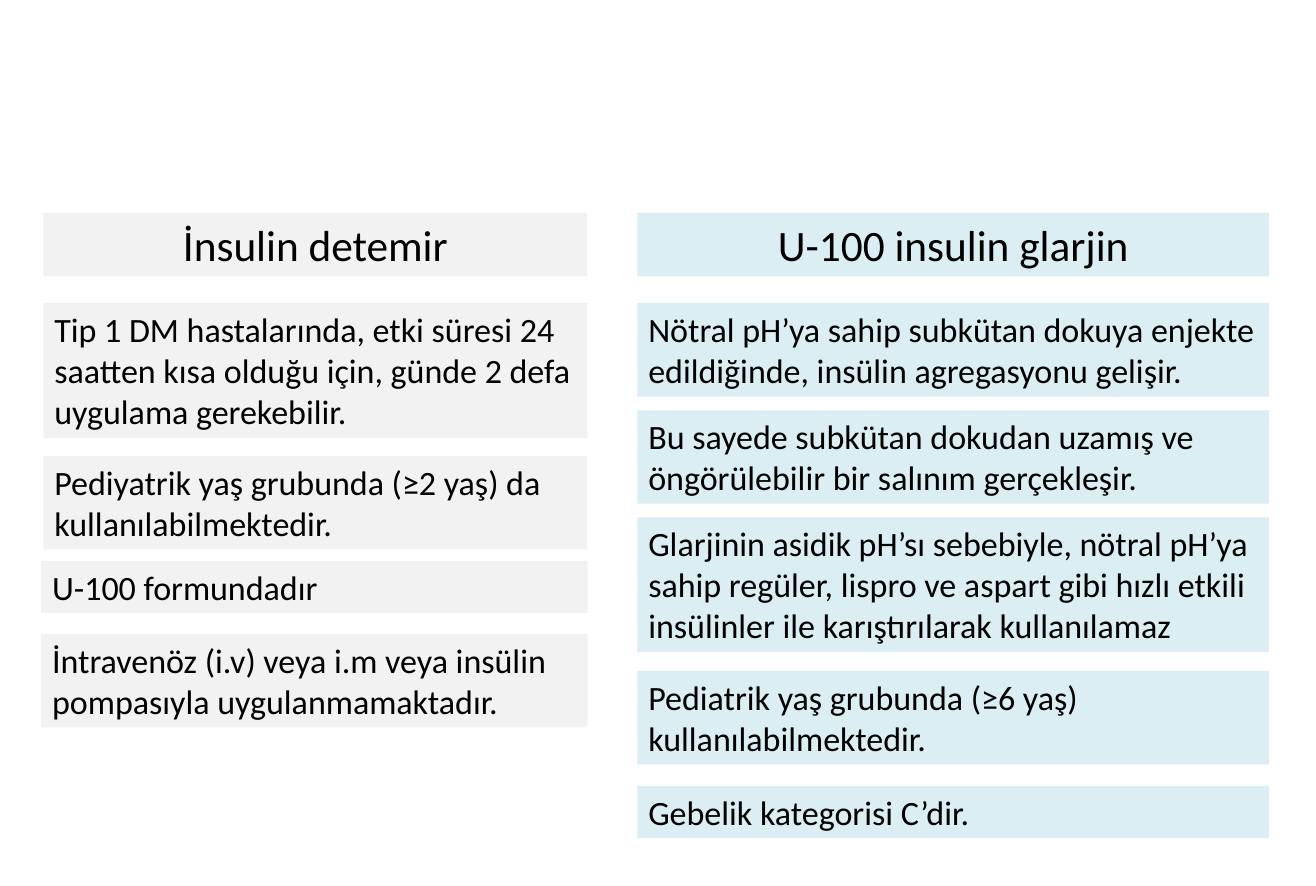
from pptx import Presentation
from pptx.dml.color import RGBColor
from pptx.enum.text import MSO_AUTO_SIZE as Fit, PP_ALIGN as Align
from pptx.util import Cm, Pt

GREY = "F2F2F2"
BLUE = "DBEEF4"


def paint(item, color):
    item.rgb = RGBColor.from_string(color)


def add_box(text, left, top, width, height, fill, size=22, align=Align.LEFT):
    box = slide.shapes.add_textbox(Cm(left), Cm(top), Cm(width), Cm(height))
    box.fill.solid()
    paint(box.fill.fore_color, fill)
    frame = box.text_frame
    frame.word_wrap = True
    frame.auto_size = Fit.SHAPE_TO_FIT_TEXT
    para = frame.paragraphs[0]
    para.alignment = align
    run = para.add_run()
    run.text = text
    run.font.name = "Calibri"
    run.font.size = Pt(size)
    paint(run.font.color, "000000")


deck = Presentation()
deck.slide_width = Cm(30)
deck.slide_height = Cm(20.19)
slide = deck.slides.add_slide(deck.slide_layouts[6])

heads = [
    ("İnsulin detemir", 0.99, 12.4, GREY),
    ("U-100 insulin glarjin", 14.53, 14.4, BLUE),
]
for text, left, width, fill in heads:
    add_box(text, left, 4.85, width, 1.45, fill, size=28, align=Align.CENTER)

facts = [
    (0.99, 12.4, GREY, [
        ("Tip 1 DM hastalarında, etki süresi 24 saatten kısa olduğu için, günde 2 defa uygulama gerekebilir.", 6.91, 3),
        ("Pediyatrik yaş grubunda (≥2 yaş) da kullanılabilmektedir.", 10.39, 2),
    ]),
    (0.94, 12.46, GREY, [
        ("U-100 formundadır", 12.78, 1),
        ("İntravenöz (i.v) veya i.m veya insülin pompasıyla uygulanmamaktadır.", 14.45, 2),
    ]),
    (14.53, 14.4, BLUE, [
        ("Nötral pH’ya sahip subkütan dokuya enjekte edildiğinde, insülin agregasyonu gelişir.", 6.91, 2),
        ("Bu sayede subkütan dokudan uzamış ve öngörülebilir bir salınım gerçekleşir.", 9.35, 2),
        ("Glarjinin asidik pH’sı sebebiyle, nötral pH’ya sahip regüler, lispro ve aspart gibi hızlı etkili insülinler ile karıştırılarak kullanılamaz", 11.79, 3),
        ("Pediatrik yaş grubunda (≥6 yaş) kullanılabilmektedir.", 15.29, 2),
        ("Gebelik kategorisi C’dir.", 17.91, 1),
    ]),
]
for left, width, fill, rows in facts:
    for text, top, lines in rows:
        add_box(text, left, top, width, 0.25 + 0.94 * lines, fill)

deck.save("out.pptx")
